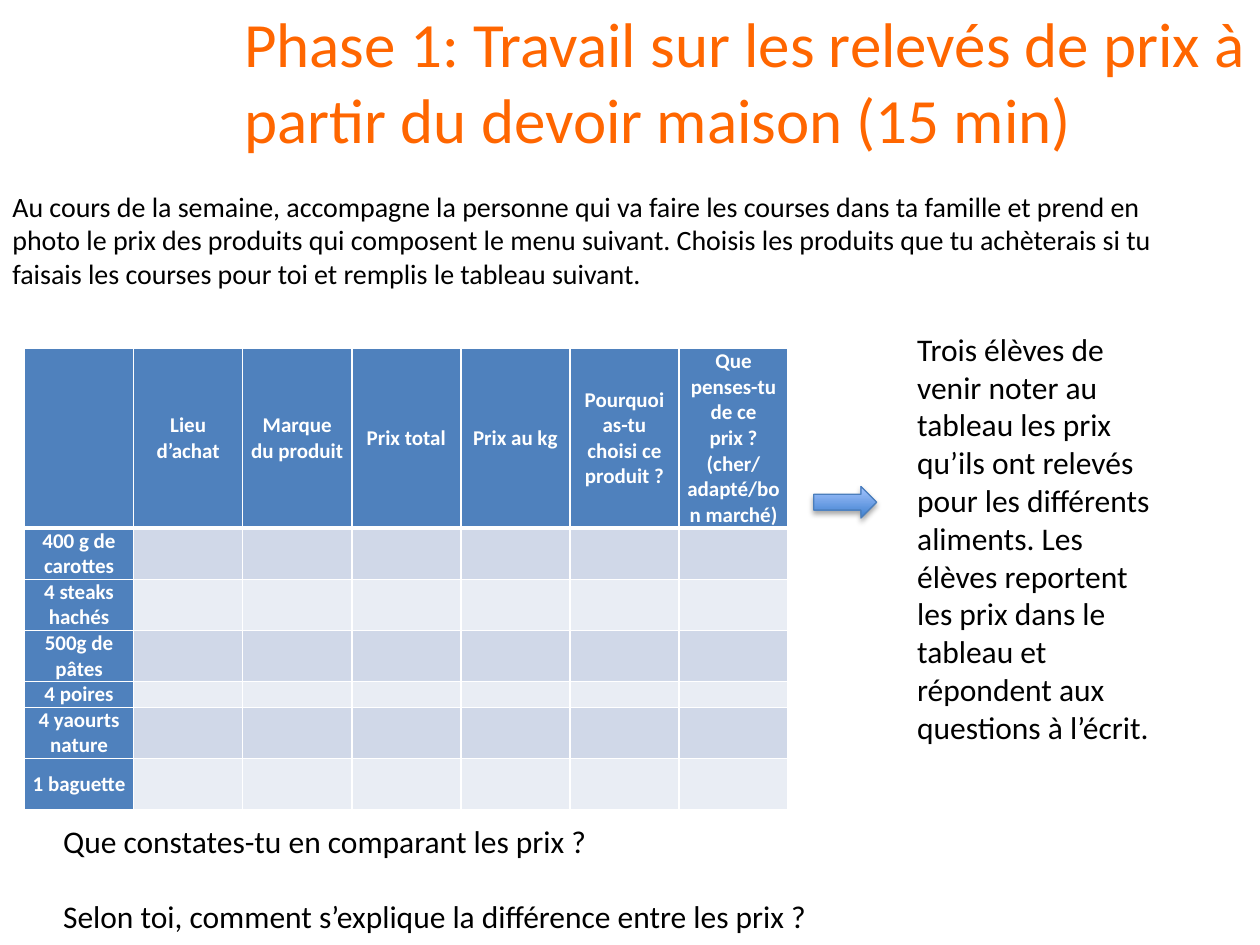
from lxml import etree
from pptx import Presentation
from pptx import util as u
from pptx.dml.color import RGBColor
from pptx.enum import shapes, text
from pptx.oxml import parse_xml
from pptx.oxml.ns import nsdecls, qn

Pt = u.Pt

# Content
TITLE = "Phase 1: Travail sur les relevés de prix à partir du devoir maison (15 min)"
HOMEWORK = (
    "Au cours de la semaine, accompagne la personne qui va faire les courses dans "
    "ta famille et prend en photo le prix des produits qui composent le menu "
    "suivant. Choisis les produits que tu achèterais si tu faisais les courses "
    "pour toi et remplis le tableau suivant."
)
CLASSWORK = (
    "Trois élèves de venir noter au tableau les prix qu’ils ont relevés pour les "
    "différents aliments. Les élèves reportent les prix dans le tableau et "
    "répondent aux questions à l’écrit."
)
QUESTIONS = [
    "Que constates-tu en comparant les prix ?",
    "Selon toi, comment s’explique la différence entre les prix ?",
]
HEADINGS = [
    "", "Lieu d’achat", "Marque du produit", "Prix total", "Prix au kg",
    "Pourquoi as-tu choisi ce produit ?",
    "Que penses-tu de ce prix ? (cher/ adapté/bon marché)",
]
# Product and number of text lines in its row
PRODUCTS = [
    ("400 g de carottes", 2), ("4 steaks hachés", 2), ("500g de pâtes", 2),
    ("4 poires", 1), ("4 yaourts nature", 2), ("1 baguette", 2),
]
HEADING_LINES = 7
LINE_HEIGHT = 14.65
COLUMN_WIDTH = 62.35
CELL_MARGIN = 4.4
BLUE, BANDS = "4F81BD", ("D0D8E8", "E9EDF4")

# Left, top, width, height, then format values
TEXTS = [
    ([TITLE], (132.5, -20.2, 609, 132.5),
     dict(size=36, color="FF6600", anchor=text.MSO_ANCHOR.MIDDLE)),
    ([HOMEWORK], (0, 104.6, 694, 82), dict(size=16)),
    ([CLASSWORK], (517, 185, 150.5, 247), dict(size=18)),
    (QUESTIONS, (29, 466, 449.3, 72.7), dict(size=18, wrap=False, gap=21.6)),
]


def rgb(value):
    return RGBColor.from_string(value)


def style_font(font, **values):
    for name, value in {"name": "Calibri", **values}.items():
        if name == "color":
            font.color.rgb = rgb(value)
        else:
            setattr(font, name, value)


def add_text(slide, paragraphs, place, size, color="000000",
             anchor=text.MSO_ANCHOR.TOP, wrap=True, gap=0):
    frame = slide.shapes.add_textbox(*map(Pt, place)).text_frame
    frame.word_wrap, frame.vertical_anchor = wrap, anchor
    for index, words in enumerate(paragraphs):
        paragraph = frame.add_paragraph() if index else frame.paragraphs[0]
        if index:
            paragraph.space_before = Pt(gap)
        run = paragraph.add_run()
        run.text = words
        style_font(run.font, size=Pt(size), color=color)


def add_borders(cell, bottom):
    properties = cell._tc.get_or_add_tcPr()
    widths = {"L": 1, "R": 1, "T": 1, "B": bottom}
    for index, (side, width) in enumerate(widths.items()):
        properties.insert(index, parse_xml(
            f'<a:ln{side} {nsdecls("a")} w="{Pt(width)}"><a:solidFill>'
            f'<a:srgbClr val="FFFFFF"/></a:solidFill></a:ln{side}>'))


def add_price_table(slide):
    rows = [HEADINGS] + [[name] + [""] * (len(HEADINGS) - 1) for name, _ in PRODUCTS]
    heights = [LINE_HEIGHT * n for n in [HEADING_LINES] + [n for _, n in PRODUCTS]]
    table = slide.shapes.add_table(
        len(rows), len(HEADINGS), Pt(14), Pt(199.2),
        Pt(COLUMN_WIDTH * len(HEADINGS)), Pt(sum(heights))).table
    table.first_col = True
    layout = dict(margin_left=Pt(CELL_MARGIN), margin_right=Pt(CELL_MARGIN),
                  margin_top=0, margin_bottom=0,
                  vertical_anchor=text.MSO_ANCHOR.MIDDLE)
    for r, labels in enumerate(rows):
        table.rows[r].height = Pt(heights[r])
        for c, label in enumerate(labels):
            cell = table.cell(r, c)
            for name, value in layout.items():
                setattr(cell, name, value)
            cell.fill.solid()
            cell.fill.fore_color.rgb = rgb(BLUE if r == 0 or c == 0 else BANDS[(r - 1) % 2])
            add_borders(cell, bottom=1 if r else 3)
            paragraph = cell.text_frame.paragraphs[0]
            paragraph.alignment = text.PP_ALIGN.CENTER
            if label:
                run = paragraph.add_run()
                run.text = label
                style_font(run.font, size=Pt(12), bold=True, color="FFFFFF")
            else:
                # Keeps empty cells from stretching their row
                etree.SubElement(paragraph._p, qn("a:endParaRPr"), sz="1200")


def add_arrow(slide):
    arrow = slide.shapes.add_shape(
        shapes.MSO_SHAPE.RIGHT_ARROW, Pt(465), Pt(278), Pt(36), Pt(18))
    arrow.fill.gradient()
    arrow.fill.gradient_angle = 90
    for stop, color, position in zip(arrow.fill.gradient_stops, ("3F80CE", "A4C4FF"), (0, 1)):
        stop.color.rgb, stop.position = rgb(color), position
    arrow.line.color.rgb, arrow.line.width = rgb("4B7EBC"), Pt(0.75)
    arrow.shadow.inherit = False
    effects = arrow._element.spPr.find(qn("a:effectLst"))
    effects.append(parse_xml(
        f'<a:outerShdw {nsdecls("a")} blurRad="{Pt(3.1)}" dist="{Pt(1.8)}" '
        'dir="5400000" rotWithShape="0"><a:srgbClr val="000000">'
        '<a:alpha val="35000"/></a:srgbClr></a:outerShdw>'))


def main():
    deck = Presentation()
    deck.slide_width, deck.slide_height = Pt(720), Pt(540)
    slide = deck.slides.add_slide(deck.slide_layouts[6])
    title, *others = TEXTS
    add_text(slide, title[0], title[1], **title[2])
    add_price_table(slide)
    add_arrow(slide)
    for paragraphs, place, values in others:
        add_text(slide, paragraphs, place, **values)
    deck.save("out.pptx")


if __name__ == "__main__":
    main()
